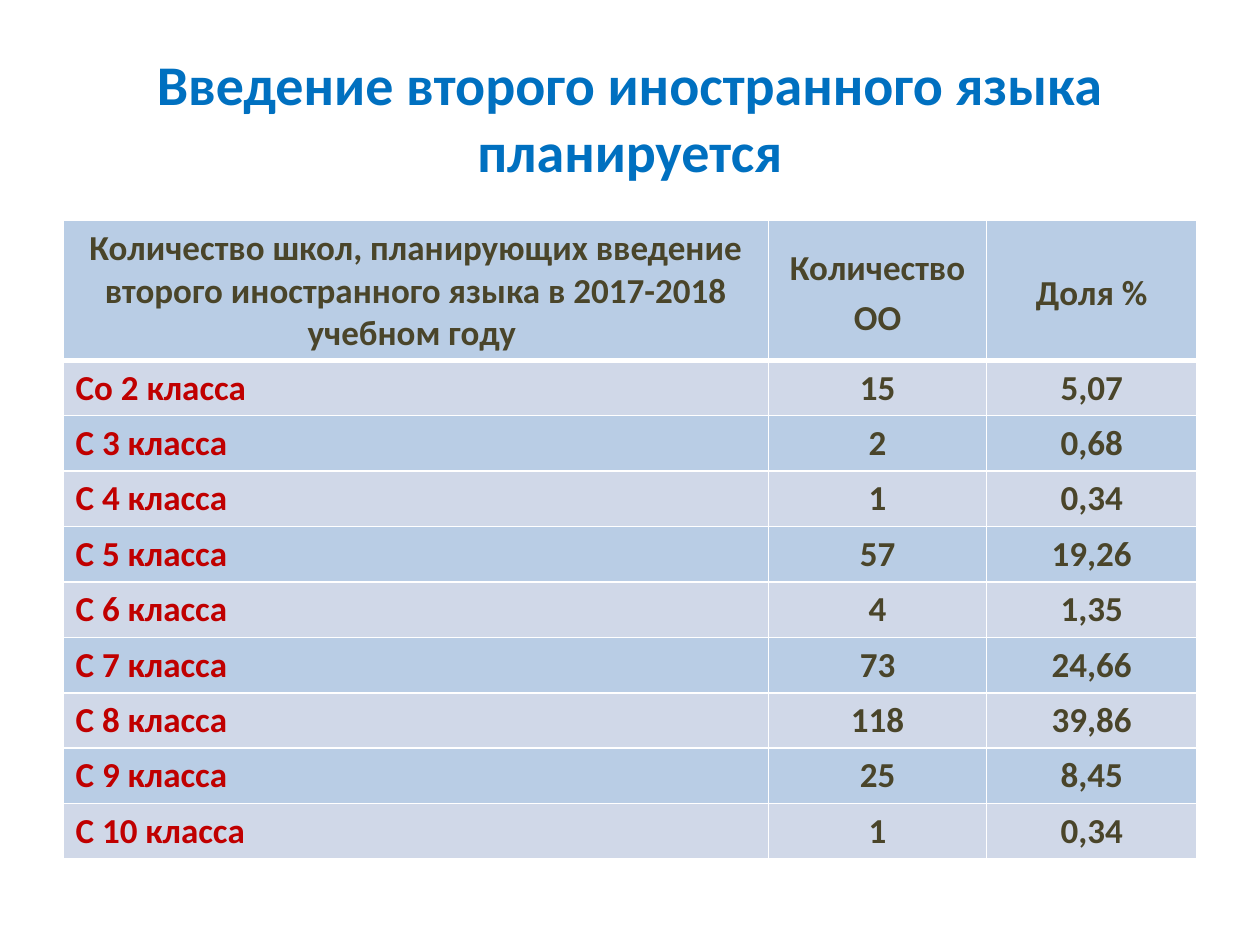
from lxml.etree import SubElement as Sub
from pptx import Presentation
from pptx.dml.color import RGBColor as Rgb
from pptx.enum.text import MSO_ANCHOR as Anchor, PP_ALIGN as Align
from pptx.oxml.ns import qn
from pptx.util import Inches, Pt

HUES = {
    "title": "0070C0", "text": "4A452A", "class": "C00000",
    "dark": "B9CDE5", "light": "D0D8E8", "line": "FFFFFF",
}
ROWS = [
    ("Количество школ, планирующих введение второго иностранного языка "
     "в 2017-2018 учебном году ", "Количество ОО", "Доля %"),
    ("Со 2 класса", "15", "5,07"),
    ("С 3 класса", "2", "0,68"),
    ("С 4 класса", "1", "0,34"),
    ("С 5 класса", "57", "19,26"),
    ("С 6 класса", "4", "1,35"),
    ("С 7 класса", "73", "24,66"),
    ("С 8 класса", "118", "39,86"),
    ("С 9 класса", "25", "8,45"),
    ("С 10 класса", "1", "0,34"),
]
WIDTHS = [5.6, 1.73, 1.67]
HEAD, STEP = 1.11, 0.44


def style(para, size, hue, align):
    para.alignment = align
    for run in para.runs:
        font = run.font
        font.name = "Calibri"
        font.size = Pt(size)
        font.bold = True
        font.color.rgb = Rgb.from_string(HUES[hue])


def edge(cell, base):
    props = cell._tc.get_or_add_tcPr()
    sides = {"lnL": 1, "lnR": 1, "lnT": 1, "lnB": base}
    for spot, (tag, width) in enumerate(sides.items()):
        line = Sub(props, qn("a:" + tag), w=str(Pt(width)))
        fill = Sub(line, qn("a:solidFill"))
        Sub(fill, qn("a:srgbClr"), val=HUES["line"])
        props.insert(spot, line)


deck = Presentation()
deck.slide_width, deck.slide_height = Inches(10), Inches(7.5)
slide = deck.slides.add_slide(deck.slide_layouts[6])

title = slide.shapes.add_textbox(Inches(0.5), Inches(0.3), Inches(9), Inches(1.25))
frame = title.text_frame
frame.word_wrap = True
frame.vertical_anchor = Anchor.MIDDLE
frame.text = "Введение второго иностранного языка планируется"
style(frame.paragraphs[0], 32, "title", Align.CENTER)

height = HEAD + STEP * (len(ROWS) - 1)
table = slide.shapes.add_table(
    len(ROWS), len(WIDTHS), Inches(0.5), Inches(1.75), Inches(9), Inches(height)
).table
for col, width in zip(table.columns, WIDTHS):
    col.width = Inches(width)

for r, row in enumerate(ROWS):
    table.rows[r].height = Inches(STEP if r else HEAD)
    for c, text in enumerate(row):
        cell = table.cell(r, c)
        cell.text_frame.text = text
        para = cell.text_frame.paragraphs[0]
        label = r > 0 and c == 0
        style(para, 20, "class" if label else "text",
              Align.LEFT if label else Align.CENTER)
        if c:
            para.line_spacing = 1.15
            cell.margin_left = cell.margin_right = Inches(0.07)
            cell.margin_top = cell.margin_bottom = 0
        cell.vertical_anchor = Anchor.TOP if r else Anchor.MIDDLE
        cell.fill.solid()
        cell.fill.fore_color.rgb = Rgb.from_string(HUES["light" if r % 2 else "dark"])
        edge(cell, 1 if r else 3)

deck.save("out.pptx")
